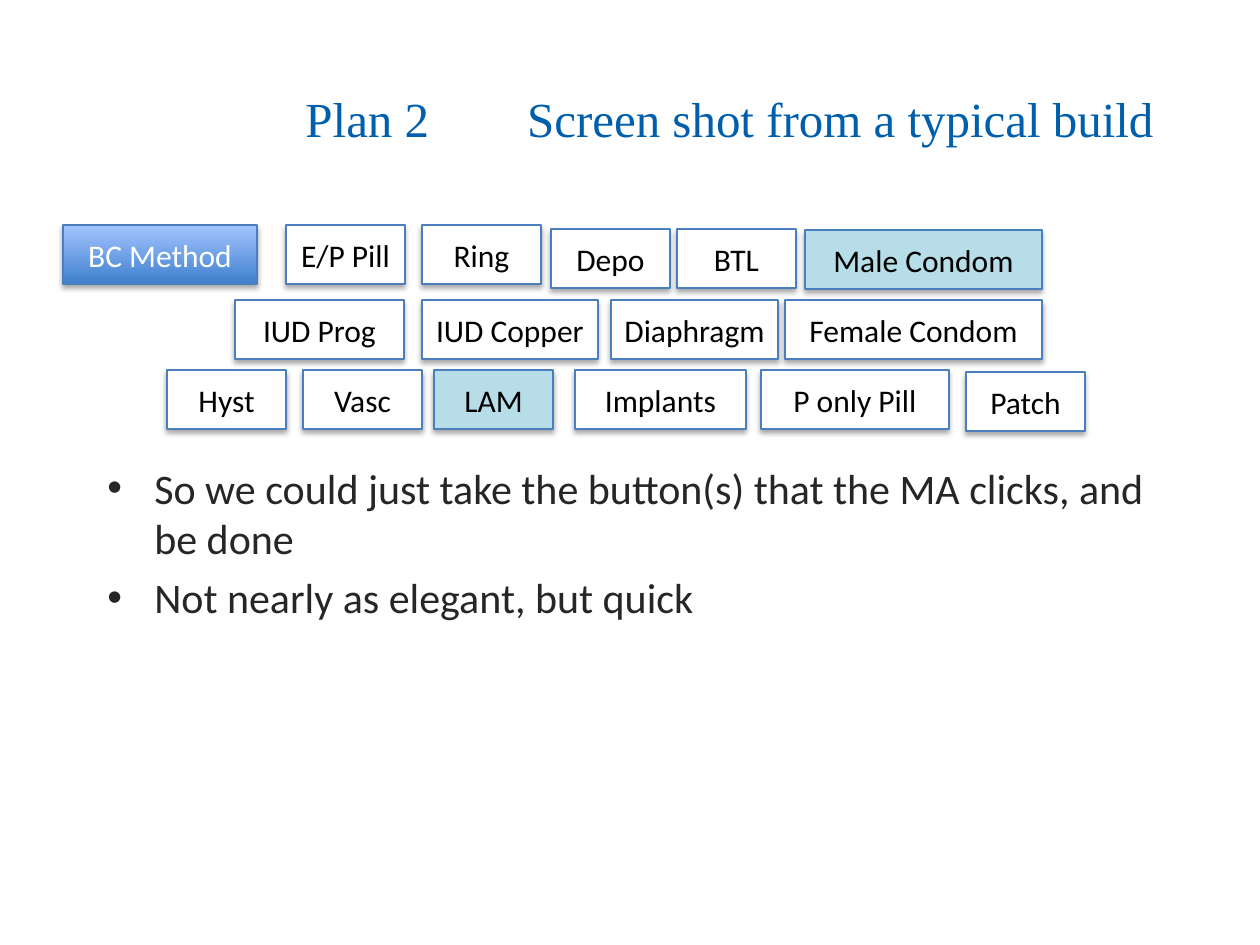
"""Build a slide of contraceptive method buttons with a short commentary."""
from dataclasses import dataclass

from lxml.etree import SubElement
from pptx import Presentation
from pptx.dml.color import RGBColor
from pptx.enum.shapes import MSO_SHAPE as Preset
from pptx.enum.text import MSO_ANCHOR as Anchor, PP_ALIGN as Align
from pptx.oxml.ns import qn
from pptx.util import Emu, Pt


@dataclass(frozen=True)
class Theme:
    title: str = "005FAD"
    body: str = "262626"
    line: str = "4B7EBC"
    black: str = "000000"
    white: str = "FFFFFF"
    selected: str = "B7DEE8"
    gradient: tuple[str, str] = ("3F80CE", "A4C4FF")
    title_font: str = "Times New Roman"
    body_font: str = "Calibri"
    title_size: int = 28
    body_size: int = 24
    button_size: int = 18


@dataclass(frozen=True)
class Button:
    label: str
    left: int
    top: int
    width: int = 119
    style: str = "plain"


THEME = Theme()
BUTTON_HEIGHT = 59
BUTTONS = (
    Button("BC Method", 63, 225, 194, "heading"),
    Button("E/P Pill", 286, 225),
    Button("Ring", 422, 225),
    Button("Depo", 551, 229),
    Button("BTL", 677, 229),
    Button("Male Condom", 805, 230, 237, "selected"),
    Button("IUD Prog", 235, 300, 169),
    Button("IUD Copper", 422, 300, 176),
    Button("Diaphragm", 611, 300, 167),
    Button("Female Condom", 785, 300, 257),
    Button("Hyst", 167, 370),
    Button("Vasc", 303, 370),
    Button("LAM", 434, 370, style="selected"),
    Button("Implants", 575, 370, 171),
    Button("P only Pill", 761, 370, 188),
    Button("Patch", 966, 372),
)
POINTS = (
    "So we could just take the button(s) that the MA clicks, and be done",
    "Not nearly as elegant, but quick",
)


def px(length: int) -> Emu:
    """Convert pixels to EMU at 126 pixels to the inch."""
    return Emu(round(length * 914400 / 126))


def color(value: str) -> RGBColor:
    """Return the colour for a hexadecimal value."""
    return RGBColor.from_string(value)


def add_run(paragraph, text: str, size: int, font: str, ink: str):
    """Add one formatted run and return it."""
    run = paragraph.add_run()
    run.text = text
    run.font.size = Pt(size)
    run.font.name = font
    run.font.color.rgb = color(ink)
    return run


def add_text_box(slide, left: int, top: int, width: int, height: int):
    """Add a wrapping text box and return its text frame."""
    frame = slide.shapes.add_textbox(px(left), px(top), px(width), px(height)).text_frame
    frame.word_wrap = True
    return frame


def add_title(slide) -> None:
    """Add the title, with its two parts set apart by a widened space."""
    frame = add_text_box(slide, 95, 57, 1071, 122)
    frame.vertical_anchor = Anchor.MIDDLE
    paragraph = frame.paragraphs[0]
    paragraph.alignment = Align.RIGHT
    for text, spacing in (("Plan 2", 0), (" ", 4900), ("Screen shot from a typical build", 0)):
        run = add_run(paragraph, text, THEME.title_size, THEME.title_font, THEME.title)
        run.font._element.set("spc", str(spacing))


def add_points(slide) -> None:
    """Add the bulleted commentary."""
    frame = add_text_box(slide, 95, 456, 1071, 375)
    for index, text in enumerate(POINTS):
        paragraph = frame.add_paragraph() if index else frame.paragraphs[0]
        properties = paragraph._p.get_or_add_pPr()
        properties.set("marL", str(px(47)))
        properties.set("indent", str(px(-47)))
        SubElement(properties, qn("a:buFont"), typeface="Arial")
        SubElement(properties, qn("a:buChar"), char="•")
        if index:
            paragraph.space_before = Pt(4.8)
        add_run(paragraph, text, THEME.body_size, THEME.body_font, THEME.body)


def add_shadow(shape) -> None:
    """Give a shape a soft shadow below it."""
    shape.shadow.inherit = False
    effects = shape._element.spPr.find(qn("a:effectLst"))
    shadow = SubElement(effects, qn("a:outerShdw"), blurRad=str(Pt(3.1)),
                        dist=str(Pt(1.8)), dir="5400000", rotWithShape="0")
    shade = SubElement(shadow, qn("a:srgbClr"), val=THEME.black)
    SubElement(shade, qn("a:alpha"), val="35000")


def add_button(slide, button: Button) -> None:
    """Add one labelled button."""
    shape = slide.shapes.add_shape(Preset.RECTANGLE, px(button.left), px(button.top),
                                   px(button.width), px(BUTTON_HEIGHT))
    heading = button.style == "heading"
    if heading:
        shape.fill.gradient()
        shape.fill.gradient_angle = 90
        for stop, shade in zip(shape.fill.gradient_stops, THEME.gradient):
            stop.color.rgb = color(shade)
    else:
        shape.fill.solid()
        selected = button.style == "selected"
        shape.fill.fore_color.rgb = color(THEME.selected if selected else THEME.white)
    shape.line.color.rgb = color(THEME.line)
    shape.line.width = Pt(0.75)
    add_shadow(shape)
    frame = shape.text_frame
    frame.word_wrap = False
    frame.vertical_anchor = Anchor.MIDDLE
    paragraph = frame.paragraphs[0]
    paragraph.alignment = Align.CENTER
    add_run(paragraph, button.label, THEME.button_size, THEME.body_font,
            THEME.white if heading else THEME.black)


def main() -> None:
    """Build and save the presentation."""
    presentation = Presentation()
    presentation.slide_width, presentation.slide_height = px(1260), px(945)
    slide = presentation.slides.add_slide(presentation.slide_layouts[6])
    add_title(slide)
    add_points(slide)
    for button in BUTTONS:
        add_button(slide, button)
    presentation.save("out.pptx")


if __name__ == "__main__":
    main()
